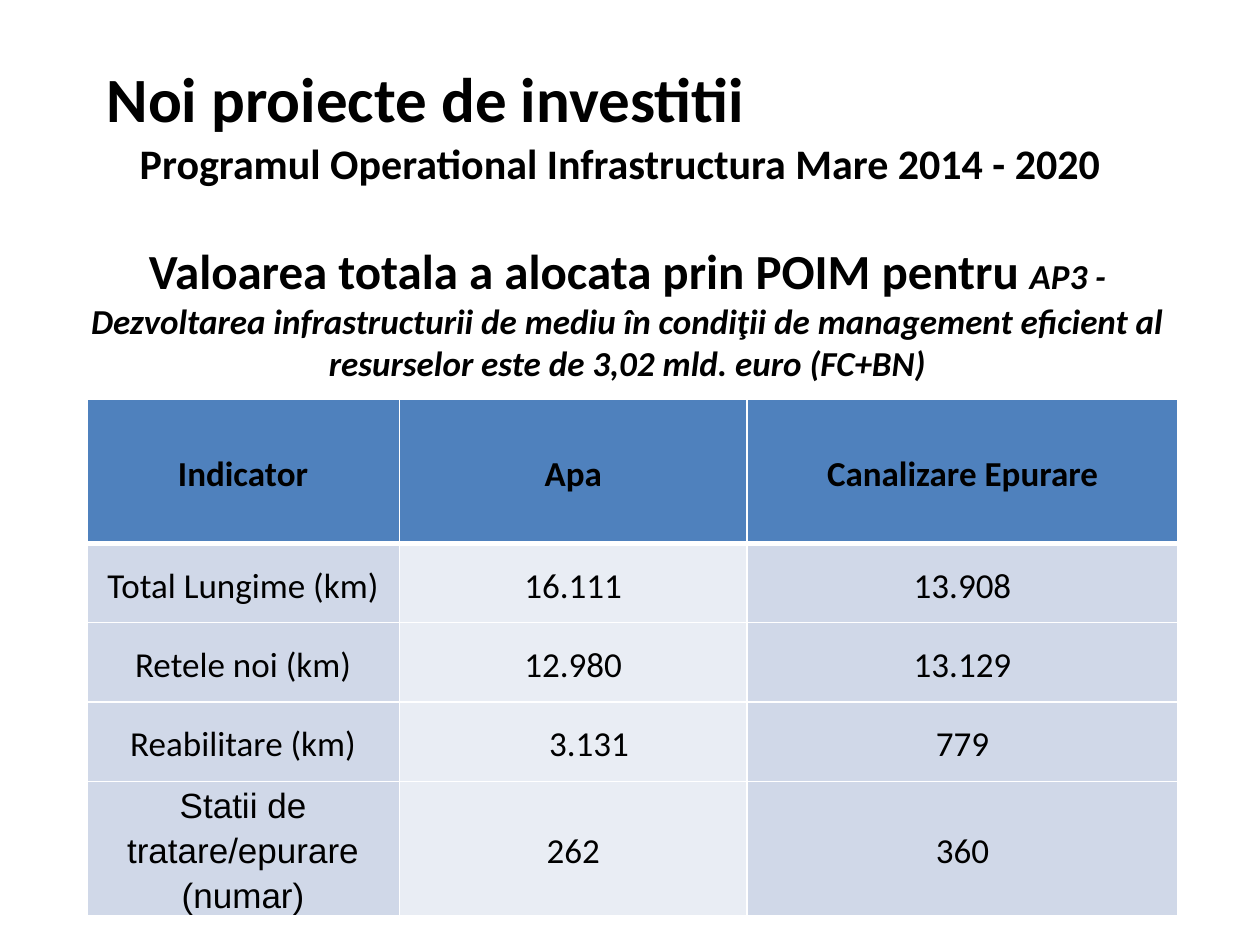
from typing import NamedTuple

from lxml.etree import SubElement
from pptx import Presentation
from pptx.dml.color import RGBColor
from pptx.enum.text import MSO_ANCHOR, PP_ALIGN
from pptx.oxml.ns import qn
from pptx.slide import Slide
from pptx.table import _Cell
from pptx.text.text import _Paragraph
from pptx.util import Cm, Pt

BLACK = RGBColor(0x00, 0x00, 0x00)
WHITE = RGBColor(0xFF, 0xFF, 0xFF)
HEADER_BLUE = RGBColor(0x4F, 0x81, 0xBD)
BAND_DARK = RGBColor(0xD0, 0xD8, 0xE8)
BAND_LIGHT = RGBColor(0xE9, 0xED, 0xF4)

COLUMN_WIDTHS = (6.3, 7.01, 8.69)
HEADER_HEIGHT, ROW_HEIGHT = 2.9, 1.6
CELL_MARGIN = 0.18
REHABILITATION_INDENT = 0.64


class Span(NamedTuple):
    text: str
    size: float = 20
    bold: bool = True
    italic: bool = False
    font: str = "Calibri"


class TextBox(NamedTuple):
    left: float
    top: float
    width: float
    height: float
    align: PP_ALIGN
    spans: tuple[Span, ...]


class Indicator(NamedTuple):
    name: str
    water: str
    sewerage: str
    name_font: str = "Calibri"
    water_indent: float = 0


TEXT_BOXES = (
    TextBox(1.5, 2.64, 22, 1.27, PP_ALIGN.CENTER,
            (Span("Programul Operational Infrastructura Mare 2014 - 2020", 24),)),
    TextBox(1.5, 4.72, 22.3, 3.18, PP_ALIGN.CENTER, (
        Span("Valoarea totala a alocata prin POIM pentru ", 28),
        Span("AP3 - Dezvoltarea infrastructurii de mediu în condiţii de management "
             "eficient al resurselor este de 3,02 mld. euro (FC+BN)", italic=True),
    )),
    TextBox(1.9, 1.07, 20.22, 1.8, PP_ALIGN.LEFT,
            (Span("Noi proiecte de investitii", 36),)),
)

INDICATORS = (
    Indicator("Indicator", "Apa", "Canalizare Epurare"),
    Indicator("Total Lungime (km)", "16.111", "13.908"),
    Indicator("Retele noi (km)", "12.980", "13.129"),
    Indicator("Reabilitare (km)", "3.131", "779", water_indent=REHABILITATION_INDENT),
    Indicator("Statii de tratare/epurare (numar)", "262", "360", name_font="Arial"),
)


def add_span(para: _Paragraph, span: Span) -> None:
    """Append one formatted run to a paragraph."""
    run = para.add_run()
    run.text = span.text
    run.font.name = span.font
    run.font.size = Pt(span.size)
    run.font.bold = span.bold
    run.font.italic = span.italic
    run.font.color.rgb = BLACK


def draw_text_box(page: Slide, item: TextBox) -> None:
    """Draw a wrapped text box holding one paragraph."""
    box = page.shapes.add_textbox(Cm(item.left), Cm(item.top), Cm(item.width), Cm(item.height))
    box.text_frame.word_wrap = True
    para = box.text_frame.paragraphs[0]
    para.alignment = item.align
    for span in item.spans:
        add_span(para, span)


def set_borders(cell: _Cell, top: float, bottom: float) -> None:
    """Give a cell white borders, thin at both sides."""
    properties = cell._tc.get_or_add_tcPr()
    for side, width in (("L", 1), ("R", 1), ("T", top), ("B", bottom)):
        line = SubElement(properties, qn(f"a:ln{side}"), w=str(Pt(width)))
        fill = SubElement(line, qn("a:solidFill"))
        SubElement(fill, qn("a:srgbClr"), val=str(WHITE))


def fill_cell(cell: _Cell, span: Span, color: RGBColor, indent: float) -> None:
    """Colour a cell and write its centred text."""
    cell.fill.solid()
    cell.fill.fore_color.rgb = color
    cell.vertical_anchor = MSO_ANCHOR.MIDDLE
    cell.margin_left = Cm(CELL_MARGIN + indent)
    cell.margin_right = Cm(CELL_MARGIN)
    cell.margin_top = cell.margin_bottom = Cm(0)
    para = cell.text_frame.paragraphs[0]
    para.alignment = PP_ALIGN.CENTER
    para.line_spacing = 1.15
    para.space_after = Pt(5)
    add_span(para, span)


def draw_indicators(page: Slide) -> None:
    """Draw the indicator table with its header and column bands."""
    heights = [HEADER_HEIGHT] + [ROW_HEIGHT] * (len(INDICATORS) - 1)
    table = page.shapes.add_table(
        len(INDICATORS), len(COLUMN_WIDTHS),
        Cm(1.75), Cm(8.05), Cm(sum(COLUMN_WIDTHS)), Cm(sum(heights)),
    ).table
    for column, width in zip(table.columns, COLUMN_WIDTHS):
        column.width = Cm(width)
    for row, (indicator, height) in enumerate(zip(INDICATORS, heights)):
        table.rows[row].height = Cm(height)
        is_header = row == 0
        values = (indicator.name, indicator.water, indicator.sewerage)
        fonts = (indicator.name_font, "Calibri", "Calibri")
        indents = (0, indicator.water_indent, 0)
        bands = (HEADER_BLUE,) * 3 if is_header else (BAND_DARK, BAND_LIGHT, BAND_DARK)
        for column, (value, font, indent, color) in enumerate(zip(values, fonts, indents, bands)):
            cell = table.cell(row, column)
            set_borders(cell, top=3 if row == 1 else 1, bottom=3 if is_header else 1)
            fill_cell(cell, Span(value, bold=is_header, font=font), color, indent)


def main() -> None:
    """Build and save the investment slide."""
    deck = Presentation()
    deck.slide_width, deck.slide_height = Cm(25.4), Cm(19.05)
    page = deck.slides.add_slide(deck.slide_layouts[6])
    draw_indicators(page)
    for item in TEXT_BOXES:
        draw_text_box(page, item)
    deck.save("out.pptx")


if __name__ == "__main__":
    main()
